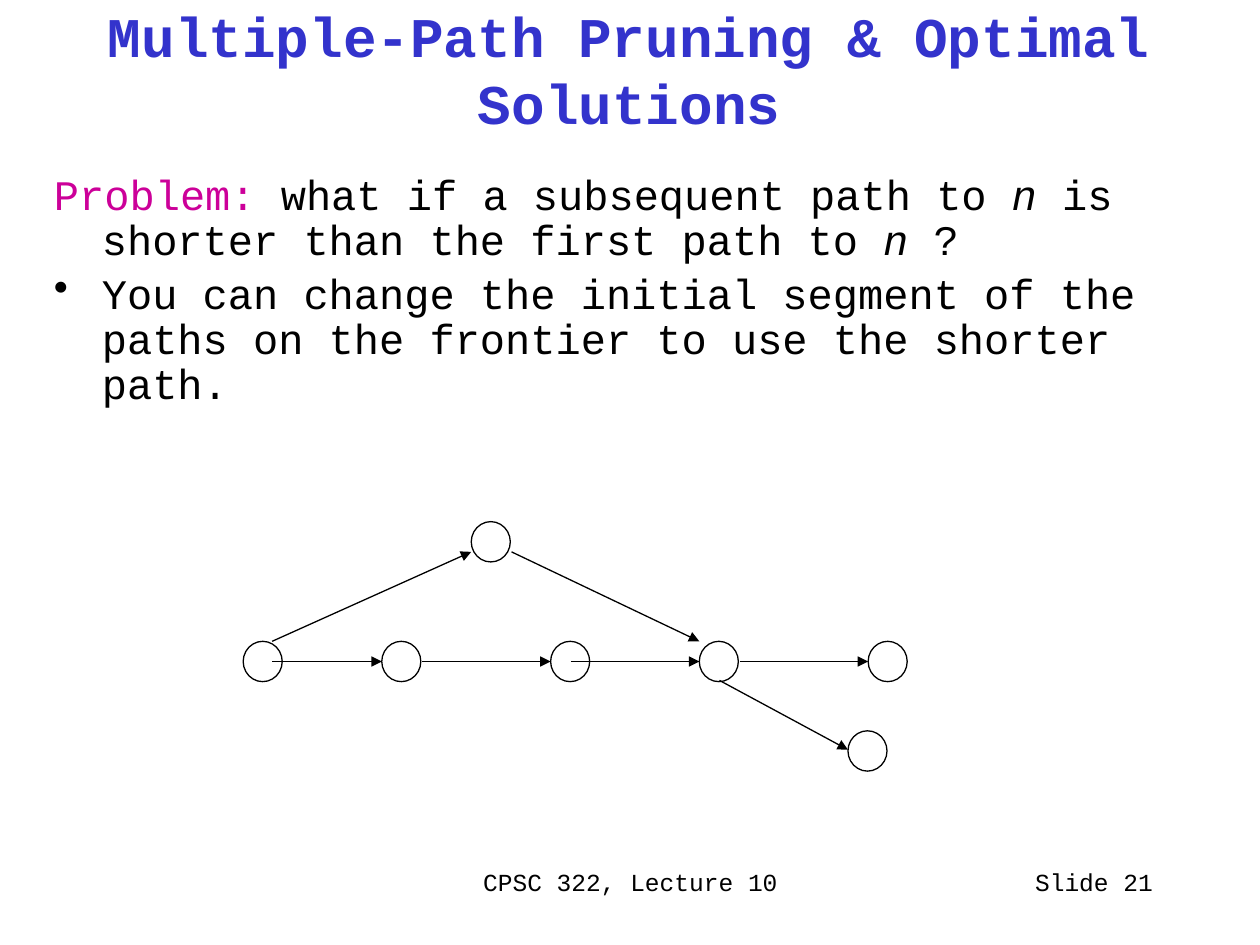
from dataclasses import dataclass

from lxml import etree
from pptx import Presentation
from pptx.dml.color import RGBColor
from pptx.enum.shapes import MSO_CONNECTOR, MSO_SHAPE
from pptx.enum.text import MSO_ANCHOR, MSO_AUTO_SIZE, PP_ALIGN
from pptx.oxml.ns import qn
from pptx.util import Inches, Pt

OVAL = MSO_SHAPE.OVAL
STRAIGHT = MSO_CONNECTOR.STRAIGHT
LEFT, CENTER, RIGHT = PP_ALIGN.LEFT, PP_ALIGN.CENTER, PP_ALIGN.RIGHT
TOP, MIDDLE = MSO_ANCHOR.TOP, MSO_ANCHOR.MIDDLE
NO_AUTOFIT = MSO_AUTO_SIZE.NONE


@dataclass(frozen=True)
class Theme:
    font: str = "Courier New"
    title_color: RGBColor = RGBColor(0x33, 0x33, 0xCC)
    accent: RGBColor = RGBColor(0xCC, 0x00, 0x99)
    ink: RGBColor = RGBColor(0x00, 0x00, 0x00)
    title_size: Pt = Pt(32)
    body_size: Pt = Pt(24)
    body_gap: Pt = Pt(4.8)
    footer_size: Pt = Pt(14)
    line_width: Pt = Pt(0.75)


theme = Theme()


def add_run(paragraph, text, size, color, bold=False, italic=False):
    run = paragraph.add_run()
    run.text = text
    run.font.name = theme.font
    run.font.size = size
    run.font.color.rgb = color
    run.font.bold = bold
    run.font.italic = italic


def prepare_frame(shape, anchor=TOP):
    frame = shape.text_frame
    frame.word_wrap = True
    frame.auto_size = NO_AUTOFIT
    frame.vertical_anchor = anchor
    return frame


presentation = Presentation()
presentation.slide_width = Inches(10)
presentation.slide_height = Inches(7.5)
slide = presentation.slides.add_slide(presentation.slide_layouts[5])

# Title
title = slide.shapes.title
title.left, title.top = Inches(0.33), Inches(0.17)
title.width, title.height = Inches(9.33), Inches(0.75)
paragraph = prepare_frame(title, MIDDLE).paragraphs[0]
paragraph.alignment = CENTER
add_run(paragraph, "Multiple-Path Pruning & Optimal Solutions",
        theme.title_size, theme.title_color, bold=True)

# Problem statement and bullet: text, colour, italic
problem = [
    ("Problem:", theme.accent, False),
    (" what if a subsequent path to ", theme.ink, False),
    ("n", theme.ink, True),
    (" is shorter than the first path to ", theme.ink, False),
    ("n ", theme.ink, True),
    ("?", theme.ink, False),
]
answer = [("You can change the initial segment of the paths on the frontier "
           "to use the shorter path.", theme.ink, False)]

body = slide.shapes.add_textbox(Inches(0.33), Inches(1.33), Inches(9.25), Inches(4.92))
frame = prepare_frame(body)
for index, (runs, bullet) in enumerate([(problem, None), (answer, "•")]):
    paragraph = frame.add_paragraph() if index else frame.paragraphs[0]
    paragraph.alignment = LEFT
    paragraph.line_spacing = 0.9
    if index:
        paragraph.space_before = theme.body_gap
    properties = paragraph._p.get_or_add_pPr()
    properties.set("marL", str(Inches(0.38)))
    properties.set("indent", str(-Inches(0.38)))
    if bullet:
        etree.SubElement(properties, qn("a:buChar"), char=bullet)
    else:
        etree.SubElement(properties, qn("a:buNone"))
    for text, color, italic in runs:
        add_run(paragraph, text, theme.body_size, color, italic=italic)

# Graph nodes
node_width, node_height = 0.31, 0.32
row_top = 5.09
nodes = [(left, row_top) for left in (1.93, 3.03, 4.37, 5.55, 6.89)]
nodes += [(3.74, 4.14), (6.73, 5.8)]
for left, top in nodes:
    node = slide.shapes.add_shape(OVAL, Inches(left), Inches(top),
                                  Inches(node_width), Inches(node_height))
    node.shadow.inherit = False
    node.fill.background()
    node.line.color.rgb = theme.ink
    node.line.width = theme.line_width

# Arrows along the row, then the detour and the lower branch
row_middle = row_top + node_height / 2
row_spans = [(2.16, 3.03), (3.35, 4.37), (4.53, 5.55), (5.87, 6.89)]
arrows = [(start, row_middle, end, row_middle) for start, end in row_spans]
arrows += [
    (2.16, row_top, 3.74, 4.38),
    (4.06, 4.38, 5.55, row_top),
    (5.71, 5.4, 6.73, 5.95),
]
for points in arrows:
    arrow = slide.shapes.add_connector(STRAIGHT, *map(Inches, points))
    arrow.line.color.rgb = theme.ink
    arrow.line.width = theme.line_width
    shape_properties = arrow._element.spPr
    outline = shape_properties.find(qn("a:ln"))
    etree.SubElement(outline, qn("a:tailEnd"), type="triangle")
    etree.SubElement(shape_properties, qn("a:effectLst"))

# Footer
footers = [
    ("CPSC 322, Lecture 10", 3.42, 3.17, CENTER),
    ("Slide 21", 7.17, 2.08, RIGHT),
]
for text, left, width, alignment in footers:
    footer = slide.shapes.add_textbox(Inches(left), Inches(6.83), Inches(width), Inches(0.5))
    paragraph = prepare_frame(footer).paragraphs[0]
    paragraph.alignment = alignment
    add_run(paragraph, text, theme.footer_size, theme.ink)

presentation.save("out.pptx")
